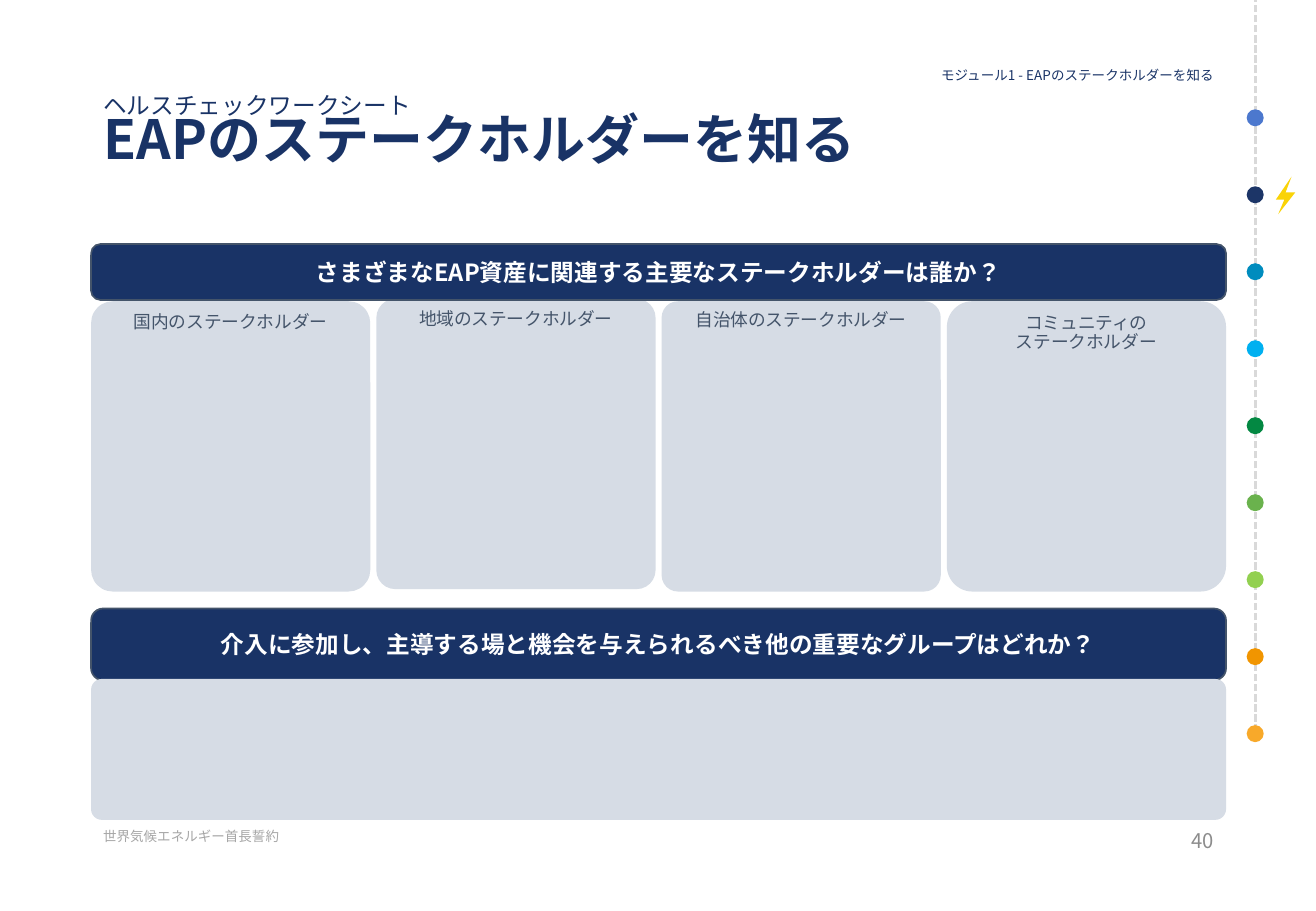
from collections import namedtuple

from lxml import etree
from pptx import Presentation
from pptx.dml.color import RGBColor
from pptx.enum.dml import MSO_LINE
from pptx.enum.lang import MSO_LANGUAGE_ID
from pptx.enum.shapes import MSO_CONNECTOR, MSO_SHAPE
from pptx.enum.text import MSO_ANCHOR, PP_ALIGN
from pptx.oxml.ns import qn
from pptx.util import Inches, Pt

ROUNDED, OVAL = MSO_SHAPE.ROUNDED_RECTANGLE, MSO_SHAPE.OVAL
LEFT, CENTER, RIGHT = PP_ALIGN.LEFT, PP_ALIGN.CENTER, PP_ALIGN.RIGHT
TOP, MIDDLE, BOTTOM = MSO_ANCHOR.TOP, MSO_ANCHOR.MIDDLE, MSO_ANCHOR.BOTTOM
STRAIGHT, DASH = MSO_CONNECTOR.STRAIGHT, MSO_LINE.SQUARE_DOT
JAPANESE = MSO_LANGUAGE_ID.JAPANESE

FONT = "Noto Sans CJK JP"
NAVY, SLATE, PALE, WHITE = "193366", "44546A", "D6DCE5", "FFFFFF"
SLIDE_W, SLIDE_H = 10.83, 7.5
MARGIN, CONTENT_W = 0.75, 9.34

STAKEHOLDERS = [  # lines of the label, corner radius, upward shift
    (["国内のステークホルダー"], 0.078, 0),
    (["地域のステークホルダー"], 0.068, 0.02),
    (["自治体のステークホルダー"], 0.059, 0),
    (["コミュニティの", "ステークホルダー"], 0.092, 0),
]
MODULE_COLORS = ["4C78CE", "1C3567", "008CBE", "00B0F0", "038842",
                 "6AB24D", "92D050", "F19500", "F8A92A"]
CURRENT_MODULE = 1
BOLT = [(0.81, 0), (0, 0.61), (0.44, 0.61), (0.12, 1), (1, 0.42), (0.5, 0.42)]

Box = namedtuple("Box", "x y w h")


def rgb(color):
    return RGBColor.from_string(color)


def inches(box):
    return [Inches(length) for length in box]


def place(shape, box):
    shape.left, shape.top, shape.width, shape.height = inches(box)


def write(shape, lines, align=LEFT, anchor=TOP, spacing=None):
    """Fill one paragraph; each line is (text, size, color, bold)."""
    frame = shape.text_frame
    frame.word_wrap = True
    frame.vertical_anchor = anchor
    frame.margin_left = frame.margin_right = Inches(0.1)
    frame.margin_top = frame.margin_bottom = Inches(0.05)
    paragraph = frame.paragraphs[0]
    paragraph.alignment = align
    paragraph.space_before = Pt(0)
    if spacing:
        paragraph.line_spacing = spacing
    for index, (text, size, color, bold) in enumerate(lines):
        if index:
            paragraph.add_line_break()
        run = paragraph.add_run()
        run.text = text
        font = run.font
        font.size, font.bold, font.language_id = Pt(size), bold, JAPANESE
        font.color.rgb = rgb(color)
        font.name = FONT
        east_asian = etree.SubElement(font._element, qn("a:ea"))
        east_asian.set("typeface", FONT)


def add_filled(slide, kind, box, fill, radius=None, outline=None):
    shape = slide.shapes.add_shape(kind, *inches(box))
    shape.shadow.inherit = False
    shape.fill.solid()
    shape.fill.fore_color.rgb = rgb(fill)
    if radius:
        shape.adjustments[0] = radius
    if outline:
        shape.line.color.rgb = rgb(outline)
        shape.line.width = Pt(1)
    else:
        shape.line.fill.background()
    return shape


def add_heading(slide, box):
    title = slide.shapes.title
    place(title, box)
    write(title, [("ヘルスチェックワークシート", 14, NAVY, False),
                  ("EAPのステークホルダーを知る", 32, NAVY, True)], spacing=0.78)


def add_module_label(slide, box):
    label = slide.placeholders[1]
    place(label, box)
    properties = label.text_frame.paragraphs[0]._p.get_or_add_pPr()
    properties.set("marL", "0")
    properties.set("indent", "0")
    etree.SubElement(properties, qn("a:buNone"))
    write(label, [("モジュール1 - EAPのステークホルダーを知る", 8, NAVY, False)],
          RIGHT, BOTTOM, 0.9)


def add_question(slide, box, question):
    band = add_filled(slide, ROUNDED, box, NAVY, outline=SLATE)
    write(band, [(question, 14, WHITE, True)], CENTER, MIDDLE)


def add_stakeholder_columns(slide, box, gap=0.05):
    count = len(STAKEHOLDERS)
    width = (box.w - gap * (count - 1)) / count
    for column, (label, radius, shift) in enumerate(STAKEHOLDERS):
        area = Box(box.x + column * (width + gap), box.y - shift, width, box.h)
        panel = add_filled(slide, ROUNDED, area, PALE, radius)
        write(panel, [(line, 10.5, SLATE, False) for line in label],
              CENTER, spacing=0.88)


def add_module_rail(slide, box):
    """Dashed line with one dot per module and a bolt at the current one."""
    middle = Inches(box.x + box.w / 2)
    rail = slide.shapes.add_connector(
        STRAIGHT, middle, Inches(box.y + box.h), middle, Inches(0))
    rail.line.color.rgb = rgb("D9D9D9")
    rail.line.width = Pt(1.5)
    rail.line.dash_style = DASH
    etree.SubElement(rail._element.spPr, qn("a:effectLst"))

    dot = box.w
    step = (box.h - dot) / (len(MODULE_COLORS) - 1)
    for index, color in enumerate(MODULE_COLORS):
        add_filled(slide, OVAL, Box(box.x, box.y + index * step, dot, dot), color)
    current = box.y + CURRENT_MODULE * step + dot / 2
    add_bolt(slide, Box(box.x + 0.24, current - 0.15, 0.16, 0.31))


def add_bolt(slide, box):
    points = [(Inches(box.x + x * box.w), Inches(box.y + y * box.h))
              for x, y in BOLT]
    builder = slide.shapes.build_freeform(*points[0])
    builder.add_line_segments(points[1:], close=True)
    bolt = builder.convert_to_shape()
    bolt.shadow.inherit = False
    bolt.fill.solid()
    bolt.fill.fore_color.rgb = rgb("FAD307")
    bolt.line.fill.background()


def add_footer(slide, box):
    number_w = 0.52
    parts = [
        (Box(box.x, box.y, 1.83, box.h),
         ("世界気候エネルギー首長誓約", 8, "A6A6A6", False), LEFT),
        (Box(box.x + box.w - number_w, box.y, number_w, box.h),
         ("40", 12, "8C8C8C", False), RIGHT),
    ]
    for area, line, align in parts:
        write(slide.shapes.add_textbox(*inches(area)), [line], align)


def main():
    deck = Presentation()
    deck.slide_width, deck.slide_height = Inches(SLIDE_W), Inches(SLIDE_H)
    slide = deck.slides.add_slide(deck.slide_layouts[1])

    def row(top, height):
        return Box(MARGIN, top, CONTENT_W, height)

    add_heading(slide, row(0.75, 1.08))
    add_module_label(slide, Box(6.67, 0.5, 3.42, 0.24))
    add_stakeholder_columns(slide, row(2.48, 2.39))
    add_question(slide, row(2.01, 0.46),
                 "さまざまなEAP資産に関連する主要なステークホルダーは誰か？")
    add_question(slide, row(5.01, 0.59),
                 "介入に参加し、主導する場と機会を与えられるべき他の重要なグループはどれか？")
    add_filled(slide, ROUNDED, row(5.59, 1.16), PALE, 0.076)
    add_module_rail(slide, Box(10.26, 0.9, 0.14, 5.21))
    add_footer(slide, row(6.77, 0.4))
    deck.save("out.pptx")


if __name__ == "__main__":
    main()
